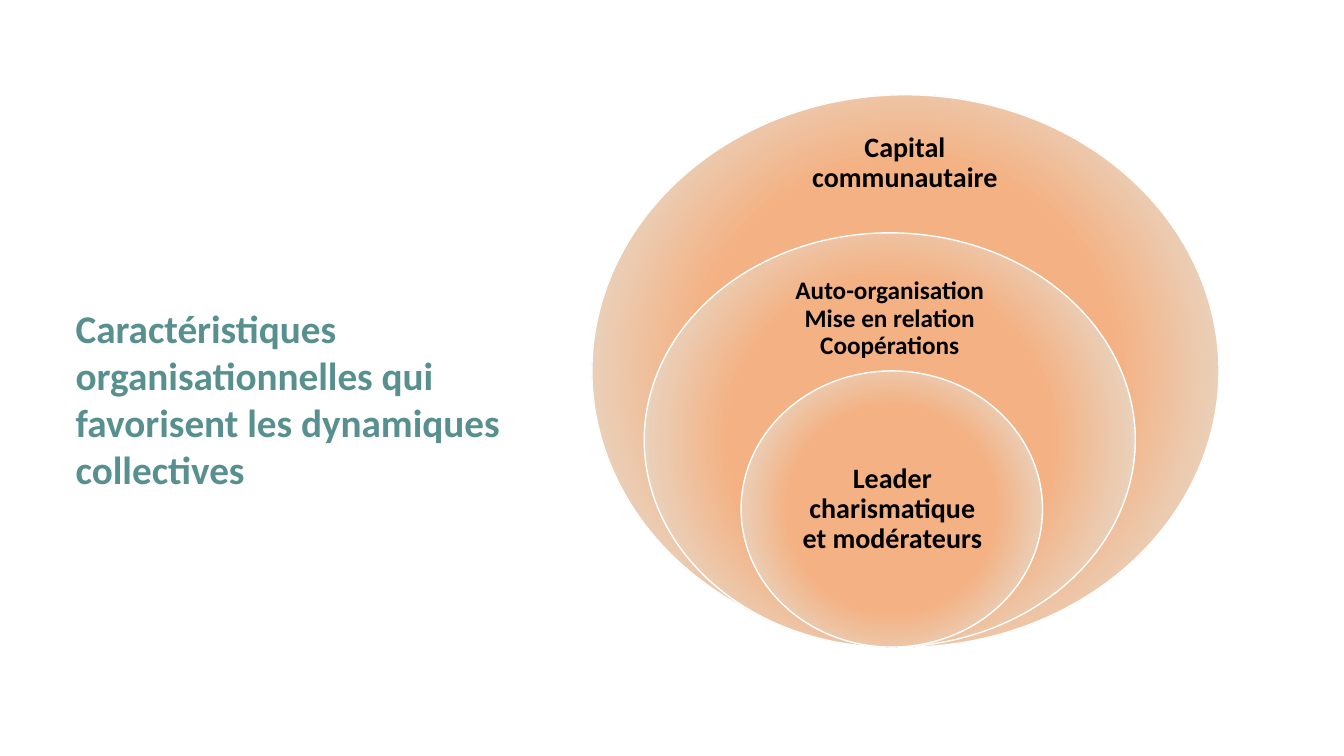
from lxml import etree
from pptx import Presentation
from pptx.dml.color import RGBColor
from pptx.enum.shapes import MSO_SHAPE as Shape
from pptx.enum.text import MSO_ANCHOR as Anchor, MSO_AUTO_SIZE as AutoSize, PP_ALIGN as Align
from pptx.oxml.ns import qn
from pptx.util import Inches, Pt

FONT = "Calibri"
TEAL = RGBColor(0x57, 0x90, 0x8F)
ORANGE = RGBColor(0xF4, 0xB1, 0x83)
PALE = RGBColor(0xE0, 0xEF, 0xEF)
WHITE = RGBColor(0xFF, 0xFF, 0xFF)
BLACK = RGBColor(0x00, 0x00, 0x00)

TITLE = "Caractéristiques organisationnelles qui favorisent les dynamiques collectives"
CIRCLES_BOTTOM = 6.42
OUTER_HEIGHT = 5.48

# Outermost first: ellipse left and width, label box, size, text
CIRCLES = [
    (5.87, 6.22, (7.89, 1.21, 2.17, 0.82), 20, "Capital communautaire"),
    (6.39, 4.87, (7.69, 2.78, 2.27, 0.77), 18, "Auto-organisation Mise en relation Coopérations"),
    (7.35, 2.99, (7.79, 4.37, 2.12, 1.37), 20, "Leader charismatique et modérateurs"),
]


def style_paragraph(paragraph, size, color, alignment):
    paragraph.alignment = alignment
    font = paragraph.font
    font.name, font.size, font.bold = FONT, Pt(size), True
    font.color.rgb = color


def fill_radial(shape):
    shape.fill.gradient()
    for stop, color, position in zip(shape.fill.gradient_stops, (ORANGE, PALE), (0.5, 1)):
        stop.color.rgb = color
        stop.position = position
    # Turn the linear gradient into one that spreads from the centre
    gradient = shape._element.spPr.find(qn("a:gradFill"))
    gradient.remove(gradient.find(qn("a:lin")))
    radial = etree.SubElement(gradient, qn("a:path"), {"path": "circle"})
    etree.SubElement(radial, qn("a:fillToRect"), {side: "50000" for side in "ltrb"})


def add_circle(slide, left, width, height):
    shape = slide.shapes.add_shape(
        Shape.OVAL, Inches(left), Inches(CIRCLES_BOTTOM - height), Inches(width), Inches(height))
    shape.shadow.inherit = False
    fill_radial(shape)
    shape.line.color.rgb = WHITE
    shape.line.width = Pt(1)


def add_label(slide, box, size, text):
    frame = slide.shapes.add_textbox(*map(Inches, box)).text_frame
    frame.word_wrap = True
    frame.vertical_anchor = Anchor.MIDDLE
    frame.margin_left = frame.margin_right = Inches(0.16)
    frame.margin_top = frame.margin_bottom = Inches(0.16)
    paragraph = frame.paragraphs[0]
    paragraph.text = text
    paragraph.line_spacing = 0.9
    style_paragraph(paragraph, size, BLACK, Align.CENTER)


def set_title(slide):
    title = slide.shapes.title
    title.left, title.top = Inches(0.65), Inches(2.97)
    title.width, title.height = Inches(5.02), Inches(1.99)
    frame = title.text_frame
    frame.text = TITLE
    frame.word_wrap = True
    frame.auto_size = AutoSize.NONE
    frame.vertical_anchor = Anchor.TOP
    style_paragraph(frame.paragraphs[0], 28, TEAL, Align.LEFT)


def main():
    presentation = Presentation()
    presentation.slide_width = Inches(13.33)
    presentation.slide_height = Inches(7.5)
    slide = presentation.slides.add_slide(presentation.slide_layouts[5])

    set_title(slide)

    # Nested circles share one base; each is a quarter of the outer height shorter
    for level, (left, width, box, size, text) in enumerate(CIRCLES):
        add_circle(slide, left, width, OUTER_HEIGHT * (1 - level / 4))
        add_label(slide, box, size, text)

    presentation.save("out.pptx")


if __name__ == "__main__":
    main()
